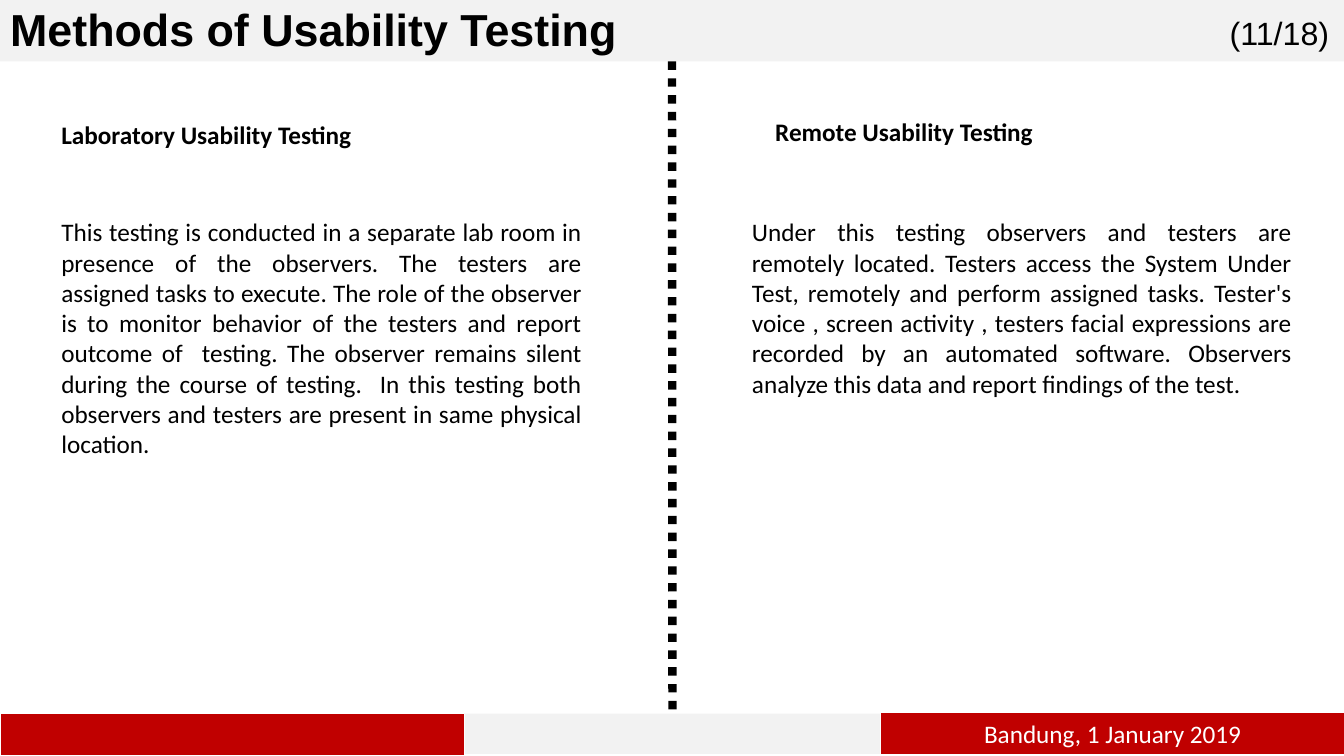
from lxml import etree
from pptx import Presentation
from pptx import util as u
from pptx.dml.color import RGBColor
from pptx.enum import dml, shapes, text
from pptx.oxml.ns import qn

WIDTH, HEIGHT = 13.33, 7.5
BLACK, WHITE, GREY, RED = "000000", "FFFFFF", "F2F2F2", "C00000"
LEFT, CENTER = text.PP_ALIGN.LEFT, text.PP_ALIGN.CENTER
JUSTIFY = text.PP_ALIGN.JUSTIFY
TOP, MIDDLE = text.MSO_ANCHOR.TOP, text.MSO_ANCHOR.MIDDLE

TITLE = "Methods of Usability Testing"
TITLE_BOX = (0, -0.03, WIDTH, 0.64)
COUNTER = "(11/18)"
COUNTER_BOX = (12.09, 0.08, 1.2, 0.49)

# heading, heading box, body, body box
COLUMNS = [
    ("Laboratory Usability Testing", (0.51, 1.13, 3.38, 0.4),
     "This testing is conducted in a separate lab room in presence of the observers. "
     "The testers are assigned tasks to execute. The role of the observer is to monitor "
     "behavior of the testers and report outcome of  testing. The observer remains silent "
     "during the course of testing.  In this testing both observers and testers are present "
     "in same physical location.", (0.51, 2.1, 5.36, 2.52)),
    ("Remote Usability Testing", (7.59, 1.1, 3.38, 0.4),
     "Under this testing observers and testers are remotely located. Testers access the "
     "System Under Test, remotely and perform assigned tasks. Tester's voice , screen "
     "activity , testers facial expressions are recorded by an automated software. "
     "Observers analyze this data and report findings of the test.", (7.36, 2.1, 5.55, 1.92)),
]

# box, fill, outline, label
FOOTER = [
    ((0, 7.08, 4.61, 0.42), RED, WHITE, ""),
    ((8.73, 7.07, 4.61, 0.42), RED, WHITE, "Bandung, 1 January 2019"),
    ((4.61, 7.08, 4.12, 0.4), GREY, None, ""),
]


def paint(color_format, value):
    color_format.rgb = RGBColor.from_string(value)


def fill_solid(shape, value):
    shape.fill.solid()
    paint(shape.fill.fore_color, value)


def write(shape, words, size, font="Calibri", color=BLACK, bold=False,
          align=LEFT, anchor=TOP, wrap=True):
    frame = shape.text_frame
    frame.word_wrap = wrap
    frame.auto_size = text.MSO_AUTO_SIZE.NONE
    frame.vertical_anchor = anchor
    paragraph = frame.paragraphs[0]
    paragraph.alignment = align
    run = paragraph.add_run()
    run.text = words
    run.font.name, run.font.size, run.font.bold = font, u.Pt(size), bold
    paint(run.font.color, color)


def add_text(slide, box, words, size, **style):
    write(slide.shapes.add_textbox(*map(u.Inches, box)), words, size, **style)


def add_title(slide):
    title = slide.shapes.title
    title.left, title.top, title.width, title.height = map(u.Inches, TITLE_BOX)
    fill_solid(title, GREY)
    write(title, TITLE, 32, font="Arial", bold=True)
    return title


def add_bar(slide, box, fill, outline, label):
    bar = slide.shapes.add_shape(shapes.MSO_SHAPE.RECTANGLE, *map(u.Inches, box))
    bar.shadow.inherit = False
    fill_solid(bar, fill)
    if outline:
        paint(bar.line.color, outline)
        bar.line.width = u.Pt(1)
    else:
        bar.line.fill.background()
    if label:
        write(bar, label, 18, color=WHITE, align=CENTER, anchor=MIDDLE)
    return bar


def add_divider(slide, upper, lower):
    """Dotted line from the bottom of upper to the top of lower."""
    divider = slide.shapes.add_connector(shapes.MSO_CONNECTOR.STRAIGHT, 0, 0, 0, 0)
    divider.begin_connect(upper, 2)
    divider.end_connect(lower, 0)
    paint(divider.line.color, BLACK)
    divider.line.width = u.Pt(6)
    divider.line.dash_style = dml.MSO_LINE.ROUND_DOT
    etree.SubElement(divider._element.spPr, qn("a:effectLst"))


def main():
    presentation = Presentation()
    presentation.slide_width = u.Inches(WIDTH)
    presentation.slide_height = u.Inches(HEIGHT)
    slide = presentation.slides.add_slide(presentation.slide_layouts.get_by_name("Title Only"))

    title = add_title(slide)
    add_text(slide, COUNTER_BOX, COUNTER, 23, font="Arial", align=CENTER, wrap=False)
    for heading, heading_box, body, body_box in COLUMNS:
        add_text(slide, heading_box, heading, 18, bold=True)
        add_text(slide, body_box, body, 18, align=JUSTIFY)
    bars = [add_bar(slide, *bar) for bar in FOOTER]
    add_divider(slide, title, bars[-1])
    presentation.save("out.pptx")


if __name__ == "__main__":
    main()
